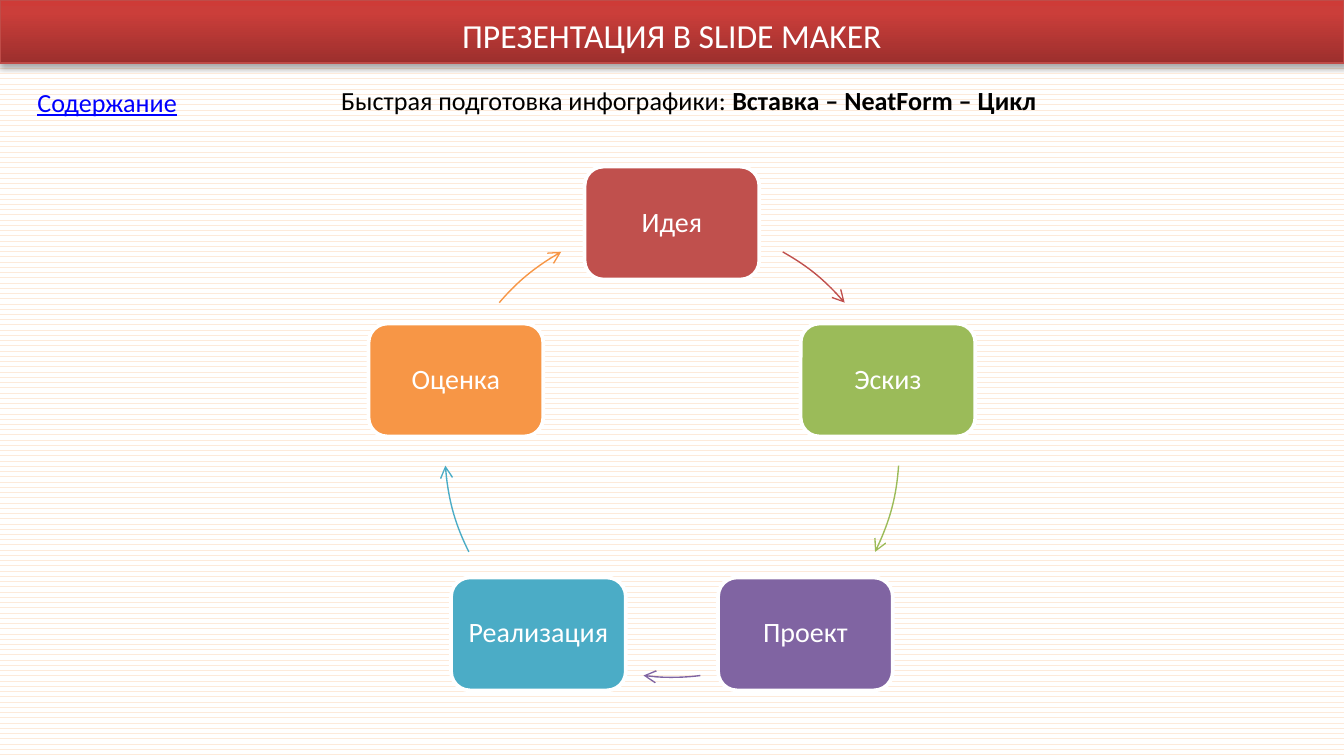
"""Builds a slide with a five-step cycle under a title bar."""
from copy import deepcopy
from math import cos, radians, sin

from lxml.etree import SubElement
from pptx import Presentation
from pptx.dml.color import RGBColor
from pptx.enum.dml import MSO_PATTERN
from pptx.enum.shapes import MSO_SHAPE
from pptx.enum.text import MSO_ANCHOR, MSO_AUTO_SIZE, PP_ALIGN
from pptx.oxml.ns import qn
from pptx.util import Inches, Pt

WIDTH = 10
HEIGHT = WIDTH * 9 / 16
CENTER_X, CENTER_Y, RADIUS = WIDTH / 2, 3.35, 1.69
BOX_WIDTH, BOX_HEIGHT = 1.3, 0.84
COLORS = {
    "white": "FFFFFF", "black": "000000", "link": "0000FF", "stripe": "FDEADA",
    "bar_dark": "9C2F2D", "bar_mid": "CB3E3A", "bar_light": "CE3B37", "bar_line": "BF4C48",
    "red": "C0504D", "green": "9BBB59", "purple": "8064A2", "teal": "4BACC6", "orange": "F79646",
}
STEPS = [
    ("Идея", "red", 29.2, 49.5),
    ("Эскиз", "green", 93.9, 116.6),
    ("Проект", "purple", 172.8, 187.2),
    ("Реализация", "teal", 243.4, 266.1),
    ("Оценка", "orange", 310.5, 330.8),
]


def color(name):
    return RGBColor.from_string(COLORS[name])


def place(shape, left, top, width, height):
    shape.left, shape.top = Inches(left), Inches(top)
    shape.width, shape.height = Inches(width), Inches(height)


def write(shape, *pieces, size=14, ink="black", align=PP_ALIGN.LEFT, anchor=MSO_ANCHOR.TOP,
          wrap=True, underline=None, spacing=1.0, side=0.1):
    """Fill a shape with one paragraph made of (text, bold) pieces."""
    frame = shape.text_frame
    frame.auto_size = MSO_AUTO_SIZE.NONE
    frame.word_wrap, frame.vertical_anchor = wrap, anchor
    frame.margin_left = frame.margin_right = Inches(side)
    frame.margin_top = frame.margin_bottom = Inches(0.05)
    para = frame.paragraphs[0]
    para.alignment, para.line_spacing = align, spacing
    for text, bold in pieces:
        span = para.add_run()
        span.text = text
        span.font.name, span.font.size = "Calibri", Pt(size)
        span.font.bold, span.font.underline = bold, underline
        span.font.color.rgb = color(ink)


def add_label(page, at, *pieces, **style):
    box = page.shapes.add_textbox(*map(Inches, at))
    write(box, *pieces, **style)


def add_plain_shape(page, kind, at, line, line_width):
    shape = page.shapes.add_shape(kind, *map(Inches, at))
    shape.shadow.inherit = False
    shape.line.color.rgb, shape.line.width = color(line), Pt(line_width)
    return shape


def add_bar(page):
    """Draw the shaded title bar behind the title."""
    bar = add_plain_shape(page, MSO_SHAPE.RECTANGLE, (0, 0, WIDTH, 0.47), "bar_line", 0.75)
    bar.fill.gradient()
    bar.fill.gradient_angle = 90
    stop_list = bar.element.spPr.find(".//" + qn("a:gsLst"))
    stop_list.append(deepcopy(stop_list[-1]))
    names = ("bar_dark", "bar_mid", "bar_light")
    for stop, name, position in zip(bar.fill.gradient_stops, names, (0, 0.8, 1)):
        stop.color.rgb, stop.position = color(name), position
    effects = bar.element.spPr.find(qn("a:effectLst"))
    shadow = SubElement(effects, qn("a:outerShdw"), blurRad=str(Pt(3.1)), dist=str(Pt(1.8)),
                        dir="5400000", rotWithShape="0")
    tint = SubElement(shadow, qn("a:srgbClr"), val=COLORS["black"])
    SubElement(tint, qn("a:alpha"), val="35000")
    page.shapes.title.element.addprevious(bar.element)


def add_step(page, text, fill, angle):
    """Draw a step box centred on the circle at an angle clockwise from the top."""
    left = CENTER_X + RADIUS * sin(radians(angle)) - BOX_WIDTH / 2
    top = CENTER_Y - RADIUS * cos(radians(angle)) - BOX_HEIGHT / 2
    box = add_plain_shape(page, MSO_SHAPE.ROUNDED_RECTANGLE,
                          (left, top, BOX_WIDTH, BOX_HEIGHT), "white", 2)
    box.fill.solid()
    box.fill.fore_color.rgb = color(fill)
    write(box, (text, False), size=15, ink="white", align=PP_ALIGN.CENTER,
          anchor=MSO_ANCHOR.MIDDLE, spacing=0.9, side=0.04)


def add_arc_arrow(page, ink, start, end):
    """Draw an arrow along the circle between two angles clockwise from the top."""
    at = (CENTER_X - RADIUS, CENTER_Y - RADIUS, 2 * RADIUS, 2 * RADIUS)
    arc = add_plain_shape(page, MSO_SHAPE.ARC, at, ink, 0.75)
    arc.fill.background()
    for index, angle in enumerate((start, end)):
        arc.adjustments[index] = (angle - 90) % 360 * 0.6
    SubElement(arc.element.spPr.find(qn("a:ln")), qn("a:tailEnd"), type="arrow")


def main():
    deck = Presentation()
    deck.slide_width, deck.slide_height = Inches(WIDTH), Inches(HEIGHT)
    page = deck.slides.add_slide(deck.slide_layouts[5])
    backdrop = page.background.fill
    backdrop.patterned()
    backdrop.pattern = MSO_PATTERN.WAVE
    backdrop.fore_color.rgb, backdrop.back_color.rgb = color("stripe"), color("white")

    add_bar(page)
    place(page.shapes.title, 0, 0.06, WIDTH, 0.4)
    write(page.shapes.title, ("ПРЕЗЕНТАЦИЯ В SLIDE MAKER", False), size=18, ink="white",
          align=PP_ALIGN.CENTER)
    add_label(page, (2.44, 0.58, 5.34, 0.34), ("Быстрая подготовка инфографики: ", False),
              ("Вставка – NeatForm – Цикл", True), wrap=False)
    for index, (text, name, start, end) in enumerate(STEPS):
        add_step(page, text, name, index * 360 / len(STEPS))
        add_arc_arrow(page, name, start, end)
    add_label(page, (0.18, 0.59, 1.34, 0.34), ("Содержание", False), ink="link", underline=True)
    deck.save("out.pptx")


if __name__ == "__main__":
    main()
